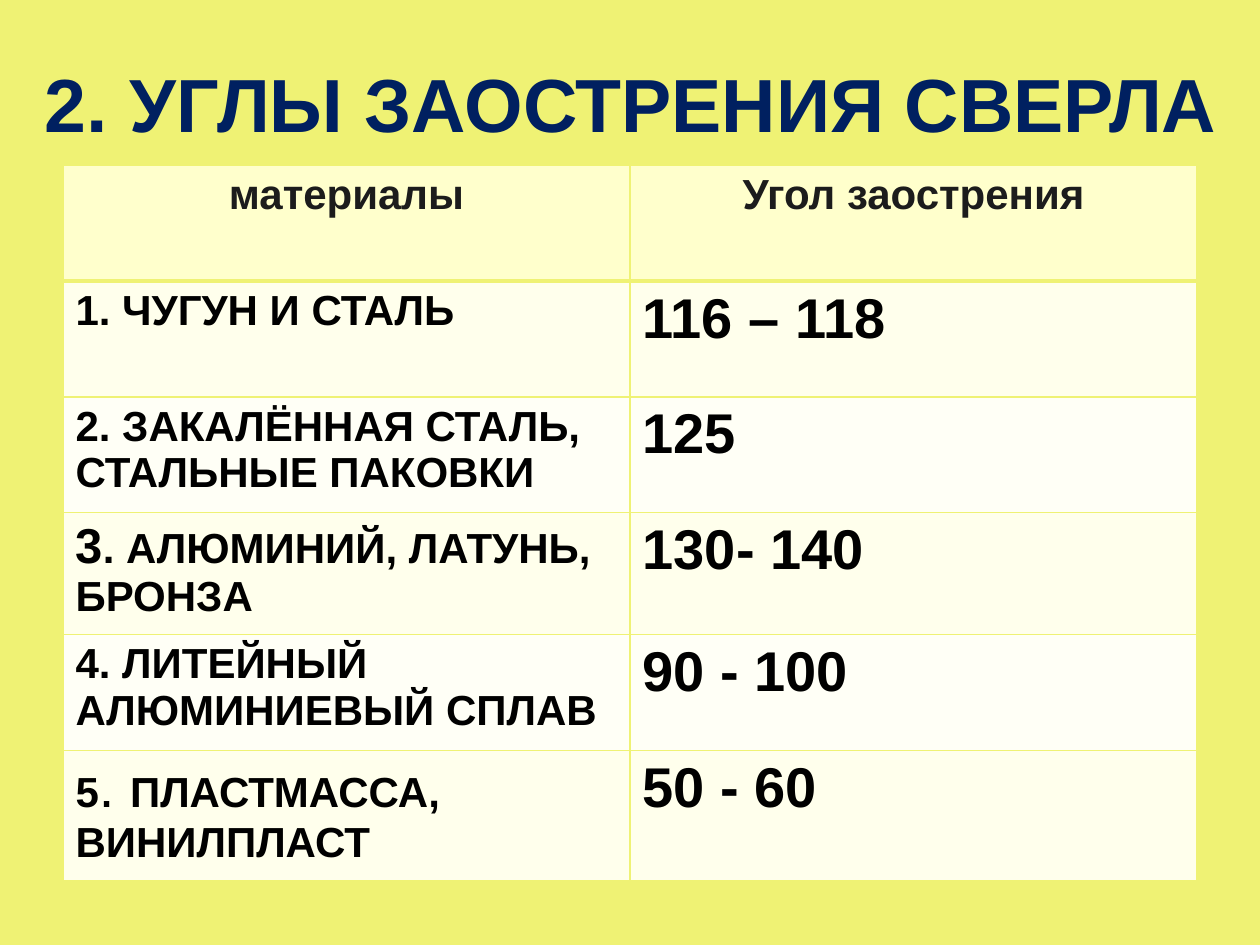
import typing

import pptx
import pptx.dml.color
import pptx.enum.text
import pptx.oxml.ns
import pptx.util
from lxml import etree

Pt = pptx.util.Pt
CENTER = pptx.enum.text.PP_ALIGN.CENTER
MIDDLE = pptx.enum.text.MSO_ANCHOR.MIDDLE

YELLOW = "EFF274"
NAVY = "002060"
GREY = "1C1C1C"
BLACK = "000000"
HEAD = "FFFFCC"
BANDS = ("FFFFF6", "FFFFEC")
ROW_H = 66.24
COL_W = 324


class Run(typing.NamedTuple):
    text: str
    size: float = 24
    bold: bool = True


class Row(typing.NamedTuple):
    name: list[Run]
    angle: str


TITLE = [Run("2", 43), Run(". ", 44), Run("УГЛЫ ЗАОСТРЕНИЯ СВЕРЛА", 43)]
HEADS = ("материалы", "Угол заострения")
ROWS = [
    Row([Run("1. ЧУГУН И СТАЛЬ")], "116 – 118"),
    Row([Run("2. ЗАКАЛЁННАЯ СТАЛЬ, СТАЛЬНЫЕ ПАКОВКИ")], "125"),
    Row([Run("3", 28), Run(". АЛЮМИНИЙ, ЛАТУНЬ, БРОНЗА")], "130- 140"),
    Row([Run("4. ЛИТЕЙНЫЙ АЛЮМИНИЕВЫЙ СПЛАВ")], "90 - 100"),
    Row([Run("5"), Run(". ", 32, False), Run("ПЛАСТМАССА, ВИНИЛПЛАСТ")], "50 - 60"),
]


def paint(fill, color: str) -> None:
    fill.solid()
    fill.fore_color.rgb = pptx.dml.color.RGBColor.from_string(color)


def write(frame, runs: list[Run], color: str, align=None) -> None:
    """Fill the frame's first paragraph run by run."""
    par = frame.paragraphs[0]
    par.alignment = align
    for item in runs:
        run = par.add_run()
        run.text = item.text
        run.font.name = "Arial"
        run.font.size = Pt(item.size)
        run.font.bold = item.bold
        paint(run.font.fill, color)


def edge(cell, base: float) -> None:
    """Draw the cell's four borders; base is the bottom width in points."""
    props = cell._tc.get_or_add_tcPr()
    qn = pptx.oxml.ns.qn
    sides = (("lnL", 1), ("lnR", 1), ("lnT", 1), ("lnB", base))
    for spot, (tag, width) in enumerate(sides):
        line = etree.Element(qn(f"a:{tag}"), w=str(Pt(width)))
        fill = etree.SubElement(line, qn("a:solidFill"))
        etree.SubElement(fill, qn("a:srgbClr"), val=YELLOW)
        props.insert(spot, line)


def add_title(slide) -> None:
    box = slide.shapes.add_textbox(Pt(14.4), Pt(21.6), Pt(692), Pt(72.7))
    frame = box.text_frame
    frame.word_wrap = True
    frame.vertical_anchor = MIDDLE
    write(frame, TITLE, NAVY, CENTER)


def add_grid(slide) -> None:
    count = len(ROWS) + 1
    table = slide.shapes.add_table(
        count, 2, Pt(36), Pt(94.3), Pt(2 * COL_W), Pt(count * ROW_H)
    ).table
    table.horz_banding = False
    for col in table.columns:
        col.width = Pt(COL_W)
    for row in table.rows:
        row.height = Pt(ROW_H)

    for col, text in enumerate(HEADS):
        cell = table.cell(0, col)
        write(cell.text_frame, [Run(text)], GREY, CENTER)
        paint(cell.fill, HEAD)
        edge(cell, 3)

    for num, row in enumerate(ROWS, 1):
        for col, runs in enumerate((row.name, [Run(row.angle, 32)])):
            cell = table.cell(num, col)
            write(cell.text_frame, runs, BLACK)
            paint(cell.fill, BANDS[num % 2])
            if num == 1:
                cell_top = 3
            else:
                cell_top = 1
            edge(cell, 1)
            cell._tc.tcPr[2].set("w", str(Pt(cell_top)))


def main() -> None:
    deck = pptx.Presentation()
    deck.slide_width = Pt(720)
    deck.slide_height = Pt(540)
    slide = deck.slides.add_slide(deck.slide_layouts[6])
    paint(slide.background.fill, YELLOW)
    add_title(slide)
    add_grid(slide)
    deck.save("out.pptx")


if __name__ == "__main__":
    main()
